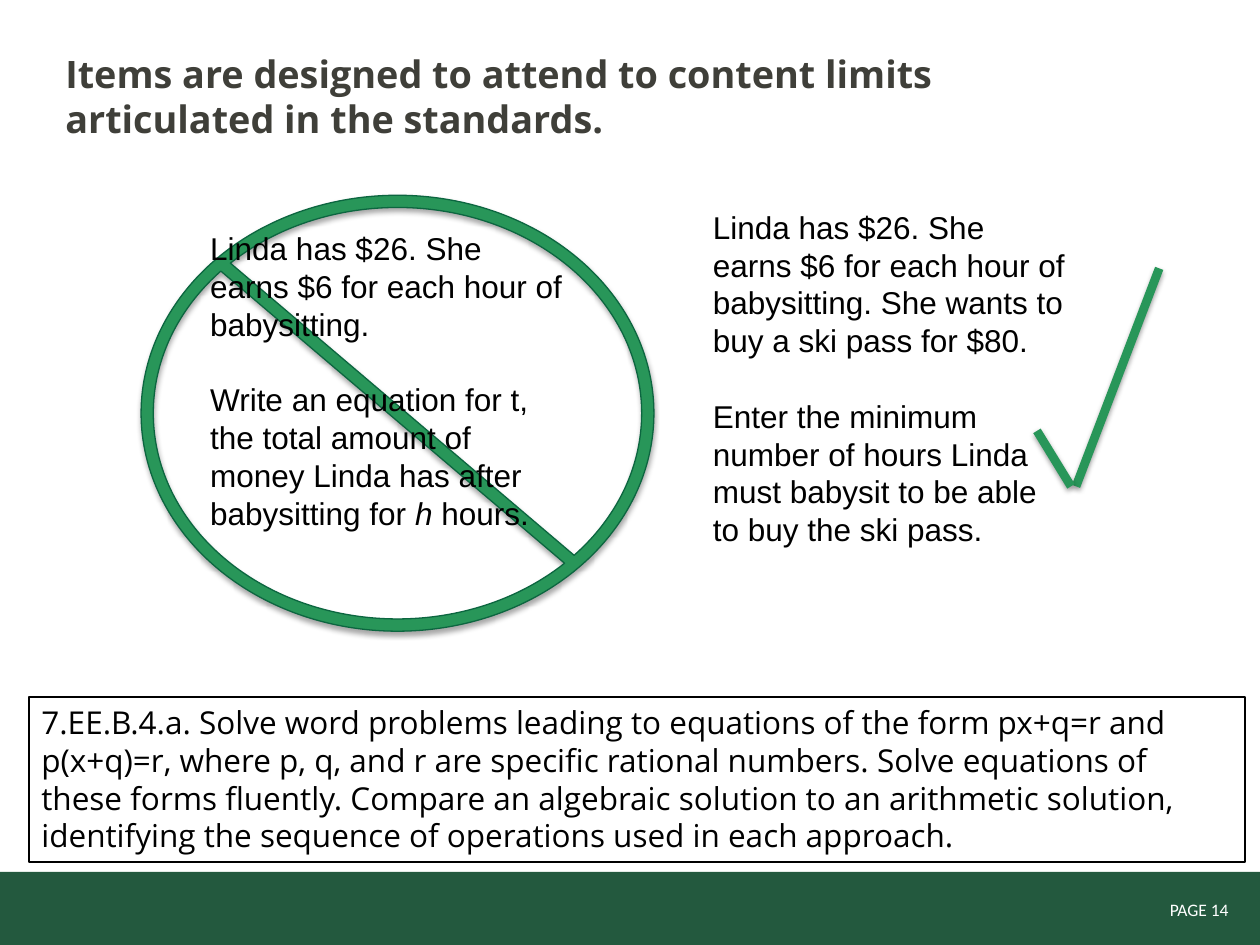
"""Build a slide contrasting two test items against a content standard."""
from lxml import etree
from pptx import Presentation
from pptx import util as u
from pptx.dml.color import RGBColor
from pptx.enum import shapes, text
from pptx.oxml.ns import qn

GREEN = "289659"
BLACK = "000000"
LINE_FACTOR = 1.2
BODY = {"name": "Arial", "size": u.Pt(18)}
STANDARD = {"name": "Open Sans", "size": u.Pt(18)}
TITLE = {"name": "Open Sans", "size": u.Pt(21.6), "bold": True}
FOOTER = {"name": "Calibri", "size": u.Pt(10)}

REJECTED_ITEM = [
    [("Linda has $26. She earns $6 for each hour of babysitting.", {})],
    [("Write an equation for t, the total amount of money Linda has after "
      "babysitting for ", {}), ("h", {"italic": True}), (" hours.", {})],
]
ACCEPTED_ITEM = [
    [("Linda has $26. She earns $6 for each hour of babysitting. "
      "She wants to buy a ski pass for $80.", {})],
    [("Enter the minimum number of hours Linda must babysit to be able "
      "to buy the ski pass.", {})],
]
STANDARD_TEXT = (
    "7.EE.B.4.a. Solve word problems leading to equations of the form px+q=r "
    "and p(x+q)=r, where p, q, and r are specific rational numbers. Solve "
    "equations of these forms fluently. Compare an algebraic solution to an "
    "arithmetic solution, identifying the sequence of operations used in each "
    "approach."
)


def rgb(value):
    """Turn a hex string into a colour."""
    return RGBColor.from_string(value)


def set_attributes(target, values):
    """Set every attribute named in a dict."""
    for name, value in values.items():
        setattr(target, name, value)


def add_shadow(properties, alpha, distance):
    """Append a soft downward shadow to shape properties."""
    effects = properties.find(qn("a:effectLst"))
    if effects is None:
        effects = etree.SubElement(properties, qn("a:effectLst"))
    shadow = etree.SubElement(
        effects, qn("a:outerShdw"), blurRad=str(u.Pt(3.1)),
        dist=str(u.Pt(distance)), dir="5400000", rotWithShape="0")
    colour = etree.SubElement(shadow, qn("a:srgbClr"), val=BLACK)
    etree.SubElement(colour, qn("a:alpha"), val=str(alpha * 1000))


def add_shape(slide, kind, box, fill=None, line=None, width=1):
    """Add a preset shape with an optional fill and outline."""
    shape = slide.shapes.add_shape(kind, *map(u.Inches, box))
    shape.shadow.inherit = False
    if fill:
        shape.fill.solid()
        shape.fill.fore_color.rgb = rgb(fill)
    else:
        shape.fill.background()
    if line:
        shape.line.color.rgb = rgb(line)
        shape.line.width = u.Pt(width)
    else:
        shape.line.fill.background()
    return shape


def add_stroke(slide, start, end):
    """Add one thick green stroke of the check mark."""
    stroke = slide.shapes.add_connector(
        shapes.MSO_CONNECTOR.STRAIGHT, *map(u.Inches, start + end))
    stroke.line.color.rgb = rgb(GREEN)
    stroke.line.width = u.Pt(5)
    add_shadow(stroke._element.spPr, 38, 1.6)


def write_text(shape, paragraphs, font, colour=BLACK, frame=None,
               align=text.PP_ALIGN.LEFT):
    """Fill a shape with paragraphs of formatted runs, one line apart."""
    text_frame = shape.text_frame
    set_attributes(text_frame, {
        "word_wrap": True, "vertical_anchor": text.MSO_ANCHOR.TOP,
        **(frame or {})})
    spacing = u.Pt(font["size"].pt * LINE_FACTOR)
    for index, runs in enumerate(paragraphs):
        paragraph = (text_frame.add_paragraph() if index
                     else text_frame.paragraphs[0])
        set_attributes(paragraph, {
            "alignment": align, "line_spacing": spacing,
            "space_before": spacing if index else u.Pt(0)})
        for words, extra in runs:
            run = paragraph.add_run()
            run.text = words
            set_attributes(run.font, {**font, **extra})
            run.font.color.rgb = rgb(colour)


def add_text(slide, box, paragraphs, font, **options):
    """Add a text box."""
    shape = slide.shapes.add_textbox(*map(u.Inches, box))
    write_text(shape, paragraphs, font, **options)


def add_footer(slide):
    """Add the green band and page number."""
    add_shape(slide, shapes.MSO_SHAPE.RECTANGLE, (0, 6.92, 10.01, 0.59),
              fill="23593E")
    add_text(slide, (8.28, 7.09, 1.59, 0.27), [[("PAGE 14", {})]], FOOTER,
             colour="FFFFFF", align=text.PP_ALIGN.RIGHT,
             frame={"margin_right": u.Inches(0.12)})


def add_no_sign(slide):
    """Add the prohibition sign."""
    sign = add_shape(slide, shapes.MSO_SHAPE.NO_SYMBOL,
                     (1.12, 1.55, 4.07, 3.46), GREEN, "0C6640", 0.75)
    sign.adjustments[0] = 0.028
    add_shadow(sign._element.spPr, 35, 1.8)


def add_check_mark(slide):
    """Add the check mark from two strokes."""
    add_stroke(slide, (8.54, 3.86), (9.2, 2.13))
    add_stroke(slide, (8.23, 3.42), (8.5, 3.86))


def main():
    """Build and save the slide."""
    presentation = Presentation()
    presentation.slide_width = u.Inches(10)
    presentation.slide_height = u.Inches(7.5)
    slide = presentation.slides.add_slide(presentation.slide_layouts[6])
    add_footer(slide)
    title = ("Items are designed to attend to content limits "
             "articulated in the standards.")
    add_text(slide, (0.42, 0.3, 8.58, 1.25), [[(title, {})]], TITLE,
             colour="3F3F39", frame={"margin_top": u.Inches(0.1)})
    add_no_sign(slide)
    standard = add_shape(slide, shapes.MSO_SHAPE.RECTANGLE,
                         (0.23, 5.53, 9.65, 1.31), line=BLACK)
    write_text(standard, [[(STANDARD_TEXT, {})]], STANDARD)
    add_check_mark(slide)
    add_text(slide, (5.56, 1.6, 3, 3.13), ACCEPTED_ITEM, BODY)
    add_text(slide, (1.57, 1.77, 3, 2.83), REJECTED_ITEM, BODY)
    presentation.save("out.pptx")


if __name__ == "__main__":
    main()
